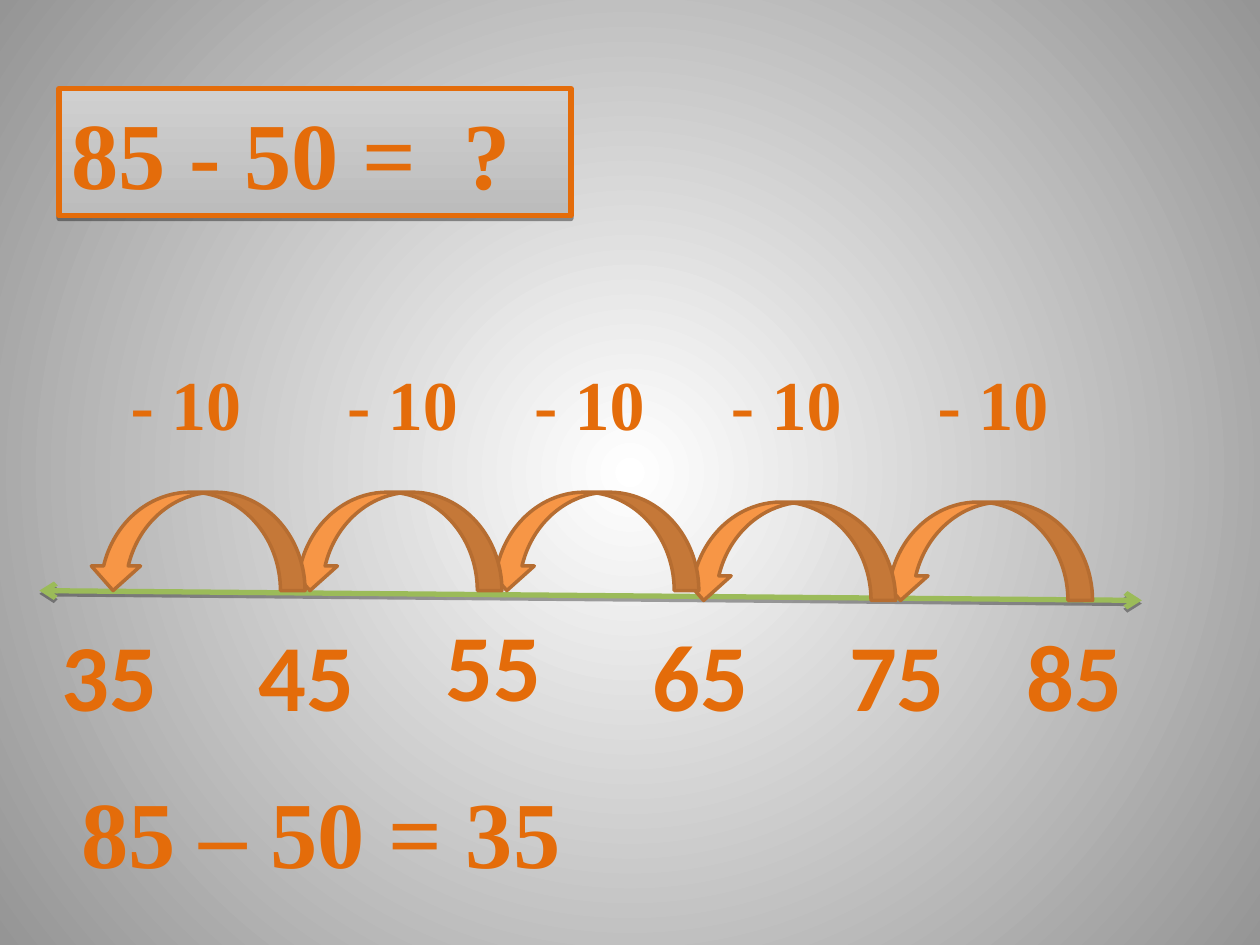
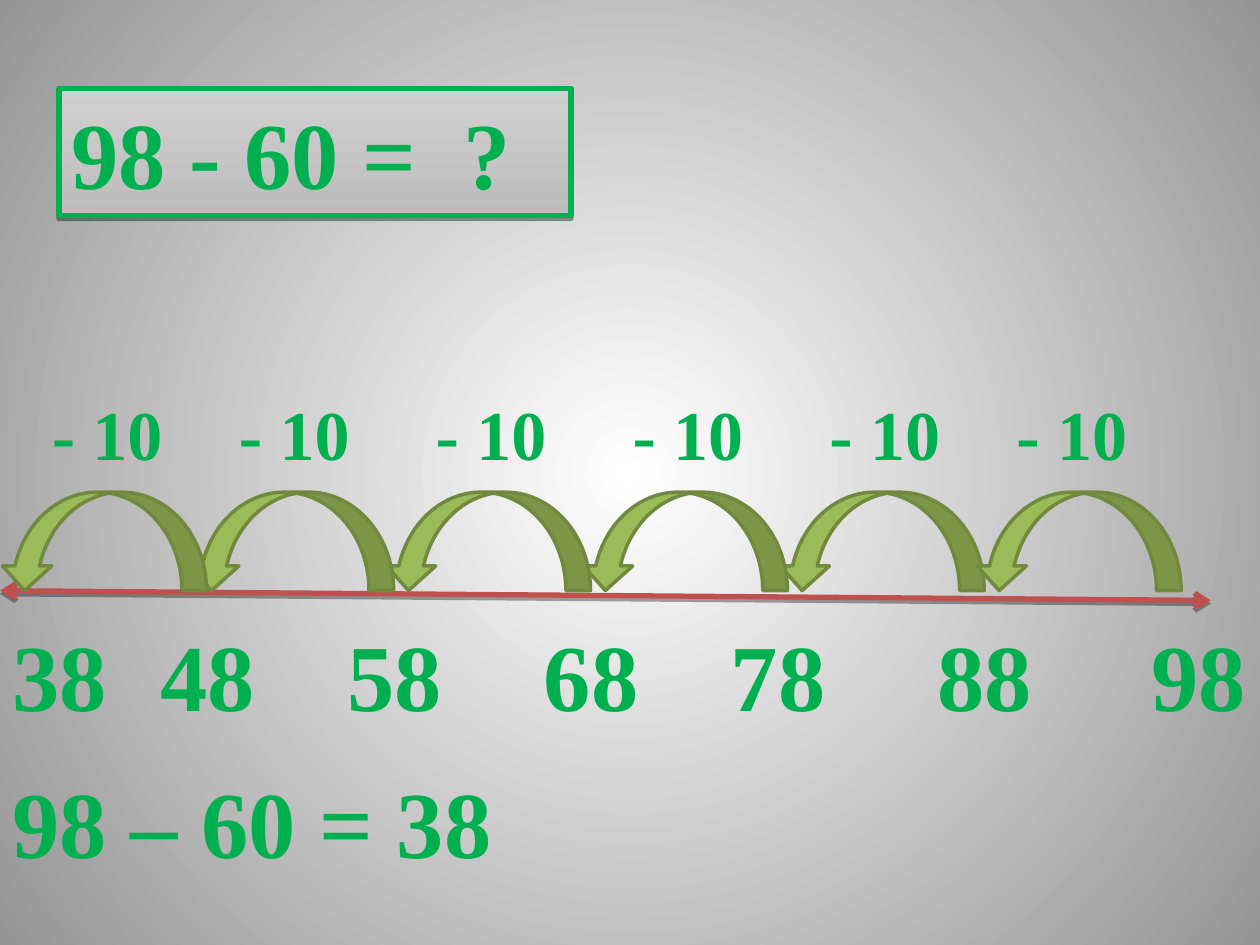
import pptx
import pptx.dml.color
import pptx.enum.shapes
import pptx.enum.text
import pptx.oxml
import pptx.oxml.ns
import pptx.util

Pt = pptx.util.Pt
SHAPES = pptx.enum.shapes.MSO_SHAPE
NAMESPACE = pptx.oxml.ns.nsdecls("a")

# Shared style
SERIF = "Times New Roman"
SANS = "Calibri"
ORANGE, GREEN = "E46C0A", "00B050"
LARGE, SMALL = 54, 40
LARGE_HEIGHT, SMALL_HEIGHT = 72.7, 55.4
JUMP_HEIGHT = 56.25
JUMP_STEP = 112.5
LINE_START, LINE_END = 337.5, 343.1
NUMBER_TOP = 348.75


def color(hex_string):
    return pptx.dml.color.RGBColor.from_string(hex_string)


def gradient(start, end, direction):
    """Return a two-stop gradient fill element."""
    return pptx.oxml.parse_xml(
        f'<a:gradFill {NAMESPACE} rotWithShape="1"><a:gsLst>'
        f'<a:gs pos="0"><a:srgbClr val="{start}"/></a:gs>'
        f'<a:gs pos="100000"><a:srgbClr val="{end}"/></a:gs>'
        f'</a:gsLst>{direction}</a:gradFill>')


def set_shadow(shape, opacity, distance):
    """Give a shape a sharp shadow straight below it."""
    shape._element.spPr.append(pptx.oxml.parse_xml(
        f'<a:effectLst {NAMESPACE}><a:outerShdw blurRad="0" dist="{Pt(distance)}" '
        'dir="5400000" rotWithShape="0"><a:srgbClr val="000000">'
        f'<a:alpha val="{opacity * 1000}"/></a:srgbClr></a:outerShdw></a:effectLst>'))


def set_line(shape, hex_string, width):
    shape.line.color.rgb = color(hex_string)
    shape.line.width = Pt(width)


def write(shape, text, *, size=LARGE, font=SERIF, ink, wrap=True):
    frame = shape.text_frame
    frame.word_wrap = wrap
    frame.auto_size = pptx.enum.text.MSO_AUTO_SIZE.SHAPE_TO_FIT_TEXT
    frame.vertical_anchor = pptx.enum.text.MSO_ANCHOR.TOP
    paragraph = frame.paragraphs[0]
    paragraph.alignment = pptx.enum.text.PP_ALIGN.LEFT
    run = paragraph.add_run()
    run.text = text
    run.font.size = Pt(size)
    run.font.name = font
    run.font.bold = True
    run.font.color.rgb = color(ink)


def add_text(slide, text, left, top, width, height=LARGE_HEIGHT, **text_format):
    box = slide.shapes.add_textbox(Pt(left), Pt(top), Pt(width), Pt(height))
    write(box, text, **text_format)


def add_question(slide, text, ink):
    box = slide.shapes.add_shape(
        SHAPES.RECTANGLE, Pt(33.75), Pt(50.6), Pt(292.5), Pt(LARGE_HEIGHT))
    box._element.spPr.append(
        gradient("BCBCBC", "D0D0D0", '<a:lin ang="16200000" scaled="0"/>'))
    set_line(box, ink, 3)
    set_shadow(box, 38, 1.6)
    write(box, text, ink=ink)


def add_number_line(slide, left, right, hex_string):
    line = slide.shapes.add_connector(
        pptx.enum.shapes.MSO_CONNECTOR.STRAIGHT,
        Pt(left), Pt(LINE_START), Pt(right), Pt(LINE_END))
    set_line(line, hex_string, 3)
    for end in ("headEnd", "tailEnd"):
        line.line._get_or_add_ln().append(
            pptx.oxml.parse_xml(f'<a:{end} {NAMESPACE} type="arrow"/>'))
    set_shadow(line, 35, 1.8)


def add_jump(slide, left, top, width, fill, outline):
    """Draw one curved arrow that leaps to the left."""
    jump = slide.shapes.add_shape(
        SHAPES.CURVED_DOWN_ARROW, Pt(left), Pt(top), Pt(width), Pt(JUMP_HEIGHT))
    jump._element.spPr.xfrm.set("flipH", "1")
    jump.shadow.inherit = False
    jump.fill.solid()
    jump.fill.fore_color.rgb = color(fill)
    set_line(jump, outline, 2)


def add_jump_labels(slide, lefts, top, ink):
    for left in lefts:
        add_text(slide, "- 10", left, top, 78.5, SMALL_HEIGHT,
                 size=SMALL, ink=ink, wrap=False)


def add_slide(presentation):
    slide = presentation.slides.add_slide(presentation.slide_layouts[6])
    slide.background.fill.solid()
    properties = slide._element.cSld.bg.bgPr
    properties.replace(properties[0], gradient(
        "FFFFFF", "959595",
        '<a:path path="circle"><a:fillToRect l="50000" t="50000" '
        'r="50000" b="50000"/></a:path>'))
    return slide


def build_tens_from_85(presentation):
    slide = add_slide(presentation)
    add_question(slide, "85 - 50 =  ?", ORANGE)
    add_number_line(slide, 22.5, 652.5, "9BBB59")
    # Jumps, from 85 down to 35
    for index in reversed(range(5)):
        top = 286.9 if index > 2 else 281.25
        add_jump(slide, 50.6 + index * JUMP_STEP, top, 123.75, "F79646", "B66D31")
    # Numbers below the line
    for index, left in enumerate((28.1, 140.6, 247.5, 365.6, 478.1, 579.4)):
        number = 35 + 10 * index
        top = LINE_END if number == 55 else NUMBER_TOP
        add_text(slide, str(number), left, top, 73.1, font=SANS, ink=ORANGE)
    add_jump_labels(slide, (67.5, 191.25, 298.1, 410.6, 528.75), 202.5, ORANGE)
    add_text(slide, "85 – 50 = 35", 39.4, 438.75, 303.75, ink=ORANGE)


def build_tens_from_98(presentation):
    slide = add_slide(presentation)
    add_question(slide, "98 - 60 =  ?", GREEN)
    add_number_line(slide, 0, 691.9, "C0504D")
    # Jumps, back to front
    for left in (444.4, 556.9, 331.9, 219.4, 106.9, 0):
        add_jump(slide, left, 281.25, 118.1, "9BBB59", "71893F")
    # Numbers below the line
    for index, left in enumerate((0, 84.4, 191.25, 303.75, 410.6, 528.75, 650.9)):
        add_text(slide, str(38 + 10 * index), left, NUMBER_TOP, 69.1,
                 ink=GREEN, wrap=False)
    add_text(slide, "98 – 60 = 38", 0, 433.1, 290.9, ink=GREEN, wrap=False)
    add_jump_labels(slide, (22.5, 129.4, 241.9, 354.4, 466.9, 573.75), 219.4, GREEN)


def main():
    presentation = pptx.Presentation()
    presentation.slide_width = Pt(720)
    presentation.slide_height = Pt(540)
    build_tens_from_85(presentation)
    build_tens_from_98(presentation)
    presentation.save("out.pptx")


if __name__ == "__main__":
    main()
